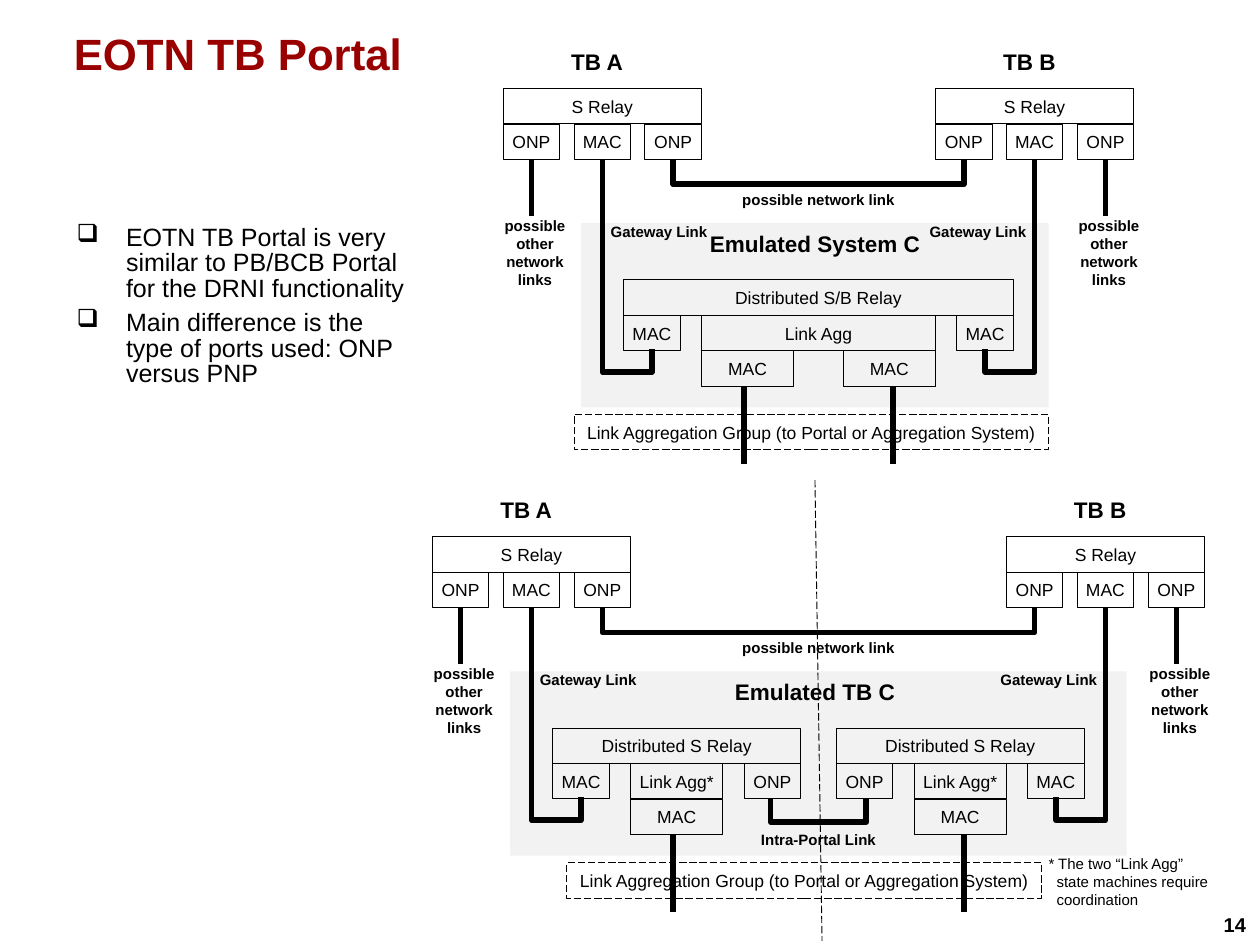
from lxml.etree import SubElement
from pptx import Presentation
from pptx.dml.color import RGBColor
from pptx.enum.dml import MSO_LINE
from pptx.enum.shapes import MSO_CONNECTOR, MSO_SHAPE
from pptx.enum.text import MSO_ANCHOR, MSO_AUTO_SIZE, PP_ALIGN
from pptx.oxml.ns import qn
from pptx.util import Cm, Inches, Pt

BLACK = RGBColor(0x00, 0x00, 0x00)
RED = RGBColor(0x99, 0x00, 0x00)
GREY = RGBColor(0xF2, 0xF2, 0xF2)

# All columns and rows are counted on a grid of one centimetre.
PORT_W = 1.6
PORT_STEP = 2
RELAY_W = 2 * PORT_STEP + PORT_W
AGG_W = 2.6
MID = 23.1

BULLETS = [
    "EOTN TB Portal is very similar to PB/BCB Portal for the DRNI functionality",
    "Main difference is the type of ports used: ONP versus PNP",
]
GROUP = "Link Aggregation Group (to Portal or Aggregation System)"


def set_font(p, size, bold=False, color=BLACK):
    p.font.name = "Arial"
    p.font.size = Pt(size)
    p.font.bold = bold
    p.font.color.rgb = color


def set_margins(tf, x=0, y=0):
    tf.margin_left = tf.margin_right = Inches(x)
    tf.margin_top = tf.margin_bottom = Inches(y)


def box(s, x, y, w, text="", h=1, fill=None, dash=None):
    """Rectangle: outlined with centred text, or filled without outline."""
    sp = s.shapes.add_shape(MSO_SHAPE.RECTANGLE, Cm(x), Cm(y), Cm(w), Cm(h))
    sp.shadow.inherit = False
    if fill is not None:
        sp.fill.solid()
        sp.fill.fore_color.rgb = fill
        sp.line.fill.background()
        return
    sp.fill.background()
    sp.line.color.rgb = BLACK
    sp.line.width = Pt(0.75)
    sp.line.dash_style = dash
    tf = sp.text_frame
    set_margins(tf)
    tf.word_wrap = False
    tf.vertical_anchor = MSO_ANCHOR.MIDDLE
    p = tf.paragraphs[0]
    p.text = text
    p.alignment = PP_ALIGN.CENTER
    set_font(p, 14)


def label(s, center, y, w, text, size=12, h=0.5, wrap=False):
    sp = s.shapes.add_textbox(Cm(center - w / 2), Cm(y), Cm(w), Cm(h))
    tf = sp.text_frame
    set_margins(tf)
    tf.word_wrap = wrap
    tf.vertical_anchor = MSO_ANCHOR.MIDDLE
    p = tf.paragraphs[0]
    p.text = text
    p.alignment = PP_ALIGN.CENTER
    set_font(p, size, bold=True)


def line(s, x1, y1, x2, y2, width=4.5, dash=None):
    c = s.shapes.add_connector(MSO_CONNECTOR.STRAIGHT, Cm(x1), Cm(y1), Cm(x2), Cm(y2))
    c.line.color.rgb = BLACK
    c.line.width = Pt(width)
    c.line.dash_style = dash
    SubElement(c._element.spPr, qn("a:effectLst"))


def link(s, x1, top1, x2, top2, bottom):
    """U-shaped thick line joining two ports."""
    fb = s.shapes.build_freeform(Cm(x1), Cm(top1))
    fb.add_line_segments([(Cm(x1), Cm(bottom)), (Cm(x2), Cm(bottom)),
                          (Cm(x2), Cm(top2))], close=False)
    sp = fb.convert_to_shape()
    sp.shadow.inherit = False
    sp.fill.background()
    sp.line.color.rgb = BLACK
    sp.line.width = Pt(4.5)


def bridge(s, name, x, y, outer):
    """TB with three ports; outer is the column of the port to other links."""
    label(s, x + 2.65, y - 1.15, 1.5, name, 18, 0.75)
    box(s, x, y, RELAY_W, "S Relay")
    for i, port in enumerate(("ONP", "MAC", "ONP")):
        box(s, x + i * PORT_STEP, y + 1, PORT_W, port)
    line(s, x + outer, y + 2, x + outer, y + 3.6)
    label(s, x + outer + 0.1, y + 3.6, 2.6, "possible other network links",
          h=2.05, wrap=True)


def portal(s, xa, xb, y, band_w, name, name_w, group_x):
    """Both bridges, their links and the emulated system's frame."""
    box(s, xa + 2.2, y + 3.8, band_w, h=5.2, fill=GREY)
    bridge(s, "TB A", xa, y, 0.8)
    bridge(s, "TB B", xb, y, 4.8)
    link(s, xa + 4.8, y + 2, xb + 0.8, y + 2, y + 2.7)
    label(s, MID, y + 2.87, 4.35, "possible network link")
    for gate, inner, text_at in ((xa + 2.8, xa + 4.2, xa + 4.4),
                                 (xb + 2.8, xb + 1.4, xb + 1.2)):
        link(s, gate, y + 2, inner, y + 7.35, y + 8)
        label(s, text_at, y + 3.78, 2.8, "Gateway Link")
    label(s, 23, y + 4, name_w, name, 18, 0.75)
    box(s, group_x, y + 9.2, 13.4, GROUP, dash=MSO_LINE.LONG_DASH)


def aggregator_port(s, x, y, line_at):
    box(s, x, y + 7.4, AGG_W, "MAC")
    line(s, x + line_at, y + 8.4, x + line_at, y + 10.6)


def joint_system(s, xa, xb, y):
    left, right = xa + 3.4, xb + 0.6
    box(s, left, y + 5.4, right + PORT_W - left, "Distributed S/B Relay")
    for x in (left, right):
        box(s, x, y + 6.4, PORT_W, "MAC")
    box(s, xa + 5.6, y + 6.4, 6.6, "Link Agg")
    aggregator_port(s, xa + 5.6, y, 1.2)
    aggregator_port(s, xa + 9.6, y, 1.4)


def split_system(s, xa, y):
    left, right = xa + 3.4, xa + 11.4
    for x, ports in ((left, ("MAC", "ONP")), (right, ("ONP", "MAC"))):
        box(s, x, y + 5.4, 7, "Distributed S Relay")
        for dx, port in zip((0, 5.4), ports):
            box(s, x + dx, y + 6.4, PORT_W, port)
        box(s, x + 2.2, y + 6.4, AGG_W, "Link Agg*")
        aggregator_port(s, x + 2.2, y, 1.2 if x == left else 1.4)
    link(s, left + 6.15, y + 7.4, right + 0.85, y + 7.4, y + 8.05)
    label(s, MID, y + 8.28, 3.3, "Intra-Portal Link")


def title(s):
    sp = s.shapes.title
    sp.left, sp.top, sp.width, sp.height = (Inches(v) for v in (0.7, 0.24, 12.6, 1.32))
    tf = sp.text_frame
    set_margins(tf, 0.12, 0.06)
    tf.auto_size = MSO_AUTO_SIZE.NONE
    tf.vertical_anchor = MSO_ANCHOR.TOP
    p = tf.paragraphs[0]
    p.text = "EOTN TB Portal"
    p.alignment = PP_ALIGN.LEFT
    set_font(p, 35, bold=True, color=RED)


def hang(p, indent, first):
    pPr = p._p.get_or_add_pPr()
    pPr.set("marL", str(Inches(indent)))
    pPr.set("indent", str(Inches(first)))
    return pPr


def bullets(s):
    sp = s.shapes.add_textbox(Inches(0.7), Inches(2.45), Inches(4.02), Inches(6.93))
    tf = sp.text_frame
    set_margins(tf, 0.12, 0.06)
    tf.word_wrap = True
    for i, text in enumerate(BULLETS):
        p = tf.add_paragraph() if i else tf.paragraphs[0]
        p.text = text
        p.line_spacing = 0.85
        p.space_before = Pt(7)
        set_font(p, 20)
        bullet = SubElement(hang(p, 0.58, -0.55), qn("a:buChar"))
        bullet.set("char", "❑")
        p._p.pPr.insert_element_before(bullet, "a:tabLst", "a:defRPr", "a:extLst")


def footnote(s):
    sp = s.shapes.add_textbox(Inches(11.65), Inches(9.5), Inches(1.89), Inches(0.61))
    tf = sp.text_frame
    set_margins(tf)
    tf.word_wrap = True
    p = tf.paragraphs[0]
    p.text = "* The two “Link Agg” state machines require coordination"
    hang(p, 0.09, -0.09)
    set_font(p, 12)


def main():
    prs = Presentation()
    prs.slide_width, prs.slide_height = Inches(14), Inches(10.5)
    s = prs.slides.add_slide(prs.slide_layouts[5])
    title(s)
    bullets(s)
    split_system_at = (12.2, 28.4, 15.15)
    portal(s, *split_system_at, 17.4, "Emulated TB C", 4.6, 16)
    split_system(s, 12.2, 15.15)
    line(s, 23, 13.55, 23.2, 26.55, 0.75, MSO_LINE.LONG_DASH)
    footnote(s)
    joint_system_at = (14.2, 26.4, 2.5)
    portal(s, *joint_system_at, 13.2, "Emulated System C", 6, 16.2)
    joint_system(s, *joint_system_at)
    label(s, 34.85, 25.75, 0.7, "14", 16, 0.7)
    prs.save("out.pptx")


if __name__ == "__main__":
    main()
